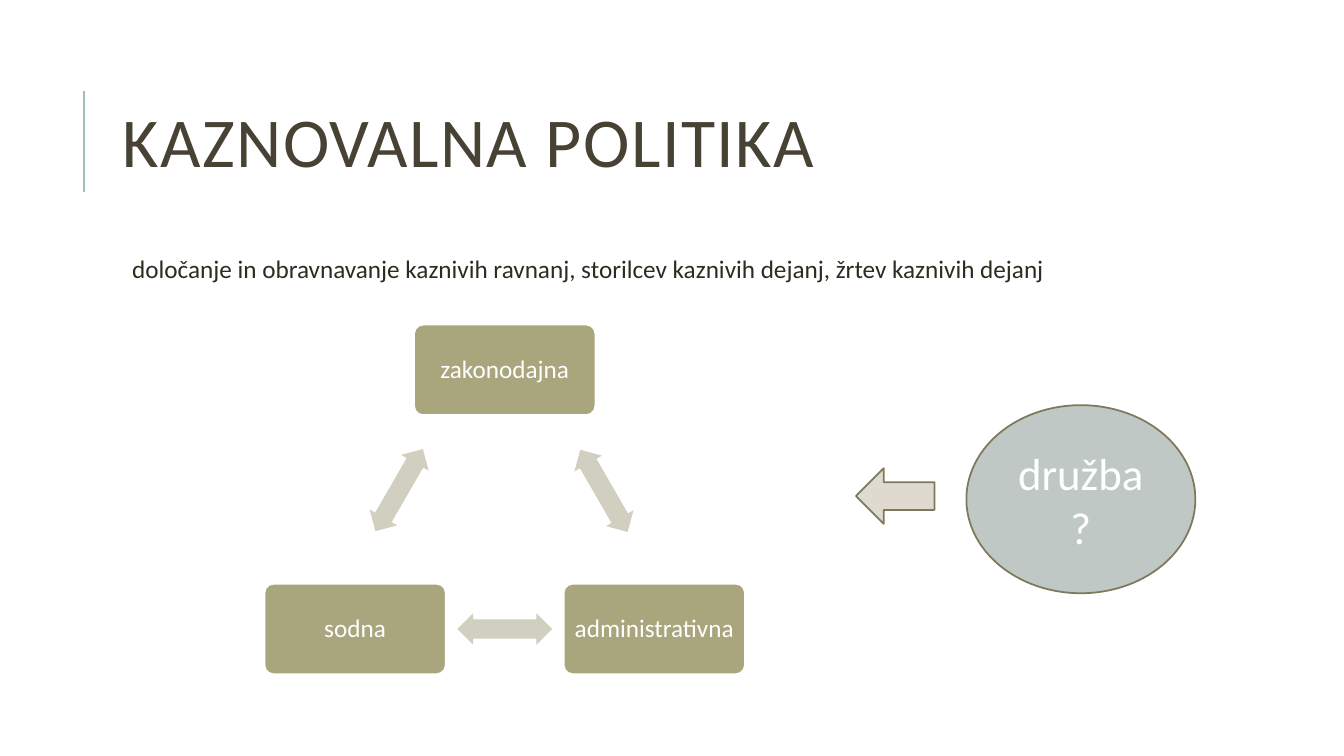
from lxml import etree
from pptx import Presentation
from pptx.dml.color import RGBColor
from pptx.enum.shapes import MSO_CONNECTOR, MSO_SHAPE
from pptx.enum.text import MSO_ANCHOR, MSO_AUTO_SIZE, PP_ALIGN
from pptx.oxml.ns import qn
from pptx.util import Cm, Pt

ROUNDED = MSO_SHAPE.ROUNDED_RECTANGLE
DOUBLE_ARROW = MSO_SHAPE.LEFT_RIGHT_ARROW
LEFT_ARROW = MSO_SHAPE.LEFT_ARROW
ROUND = MSO_SHAPE.FLOWCHART_CONNECTOR
STRAIGHT = MSO_CONNECTOR.STRAIGHT
MIDDLE, TOP = MSO_ANCHOR.MIDDLE, MSO_ANCHOR.TOP
LEFT, CENTER = PP_ALIGN.LEFT, PP_ALIGN.CENTER
NO_AUTOFIT = MSO_AUTO_SIZE.NONE

FONT = "Calibri"
WHITE, OLIVE, PALE_OLIVE, OUTLINE = "FFFFFF", "A9A57C", "D1CFBF", "7D7A5C"

# Triangle of powers, in centimetres
CENTER_X, HALF_BASE = 12.72, 3.77
TOP_Y, BASE_Y = 9.32, 15.85
SIDE_ARROW_X, SIDE_ARROW_Y = 2.5, 12.37


def color(value):
    return RGBColor.from_string(value)


def write(shape, text, size, text_color, align=CENTER, anchor=MIDDLE, spacing=1.0):
    frame = shape.text_frame
    frame.text = text
    frame.word_wrap = True
    frame.auto_size = NO_AUTOFIT
    frame.vertical_anchor = anchor
    para = frame.paragraphs[0]
    para.alignment = align
    para.line_spacing = spacing
    span = para.runs[0]
    span.font.name = FONT
    span.font.size = Pt(size)
    span.font.color.rgb = color(text_color)
    return para


def set_insets(shape, inset):
    frame = shape.text_frame
    frame.margin_left = frame.margin_right = Cm(inset)
    frame.margin_top = frame.margin_bottom = Cm(inset)


def place(shape, left, top, width, height):
    shape.left, shape.top = Cm(left), Cm(top)
    shape.width, shape.height = Cm(width), Cm(height)


def add_figure(page, kind, center_x, center_y, width, height, fill, line=None):
    shape = page.shapes.add_shape(kind, Cm(center_x - width / 2),
                                  Cm(center_y - height / 2), Cm(width), Cm(height))
    shape.shadow.inherit = False
    shape.fill.solid()
    shape.fill.fore_color.rgb = color(fill)
    if line:
        shape.line.color.rgb = color(line)
        shape.line.width = Pt(1.25)
    else:
        shape.line.fill.background()
    return shape


def add_power(page, name, center_x, center_y):
    box = add_figure(page, ROUNDED, center_x, center_y, 4.57, 2.28, OLIVE, WHITE)
    box.adjustments[0] = 0.1
    set_insets(box, 0.1)
    write(box, name, 18, WHITE, spacing=0.9)


def add_exchange(page, center_x, center_y, rotation):
    arrow = add_figure(page, DOUBLE_ARROW, center_x, center_y, 2.39, 0.8, PALE_OLIVE)
    arrow.adjustments[0] = 0.6
    arrow.adjustments[1] = 0.5
    arrow.rotation = rotation


def add_accent_line(page):
    line = page.shapes.add_connector(STRAIGHT, Cm(2.12), Cm(4.83), Cm(2.12), Cm(2.29))
    line.line.color.rgb = color("9CBEBD")
    line.line.width = Pt(1.5)
    etree.SubElement(line._element.spPr, qn("a:effectLst"))


def fill_title(page):
    title = page.shapes.title
    place(title, 2.84, 1.63, 27, 4.17)
    para = write(title, "KAZNOVALNA POLITIKA", 50, "474233", LEFT, spacing=0.8)
    para.runs[0].font._element.set("spc", "100")


def fill_body(page):
    body = page.placeholders[1]
    place(body, 2.84, 6.35, 27, 11.18)
    set_insets(body, 0.13)
    para = write(body, "določanje in obravnavanje kaznivih ravnanj, storilcev "
                 "kaznivih dejanj, žrtev kaznivih dejanj", 18, "2E2B21", LEFT, TOP, 0.9)
    para.space_before, para.space_after = Pt(2), Pt(4)
    properties = para._p.get_or_add_pPr()
    properties.set("marL", str(Cm(0.36)))
    properties.set("indent", "0")
    etree.SubElement(properties, qn("a:buNone"))


def main():
    deck = Presentation()
    deck.slide_width, deck.slide_height = Cm(33.87), Cm(19.05)
    page = deck.slides.add_slide(deck.slide_layouts[1])

    # Heading and definition
    add_accent_line(page)
    fill_title(page)
    fill_body(page)

    # Three powers and the exchanges between them
    add_power(page, "zakonodajna", CENTER_X, TOP_Y)
    add_power(page, "administrativna", CENTER_X + HALF_BASE, BASE_Y)
    add_power(page, "sodna", CENTER_X - HALF_BASE, BASE_Y)
    add_exchange(page, CENTER_X + SIDE_ARROW_X, SIDE_ARROW_Y, 60)
    add_exchange(page, CENTER_X, BASE_Y, 180)
    add_exchange(page, CENTER_X - SIDE_ARROW_X - 0.16, SIDE_ARROW_Y - 0.02, 300)

    # Society and its influence
    society = add_figure(page, ROUND, 27.24, 12.58, 5.77, 4.74, "BFC8C4", OUTLINE)
    write(society, "družba?", 32, WHITE)
    add_figure(page, LEFT_ARROW, 22.56, 12.5, 1.98, 1.4, "E0D9D0", OUTLINE)

    deck.save("out.pptx")


if __name__ == "__main__":
    main()
